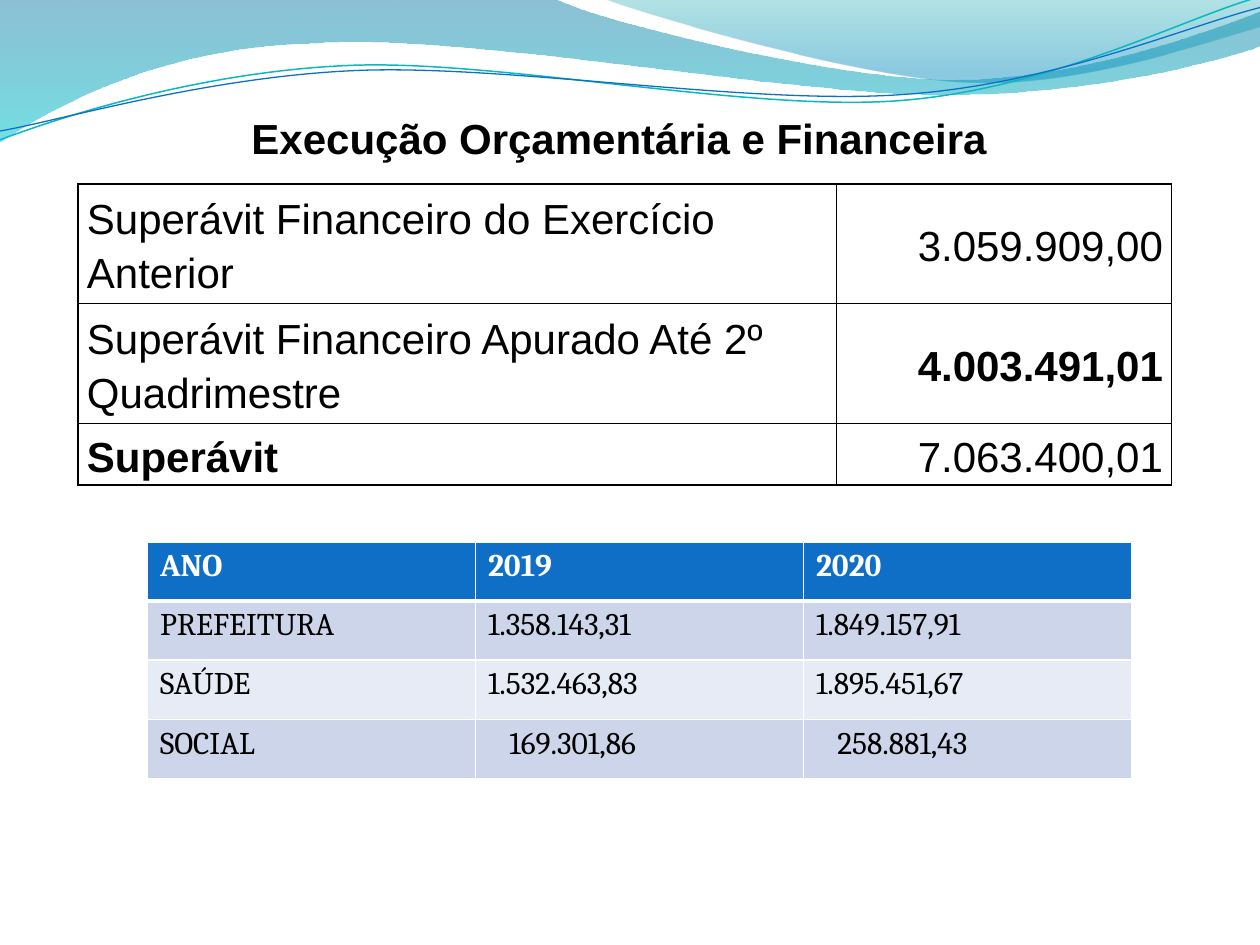
import lxml.etree
import pptx
import pptx.dml.color
import pptx.enum.text
import pptx.oxml.ns
import pptx.util

RGBColor = pptx.dml.color.RGBColor
Inches = pptx.util.Inches
Pt = pptx.util.Pt
ALIGN = pptx.enum.text.PP_ALIGN
ANCHOR = pptx.enum.text.MSO_ANCHOR
qn = pptx.oxml.ns.qn

BLACK = RGBColor(0x00, 0x00, 0x00)
WHITE = RGBColor(0xFF, 0xFF, 0xFF)
BLUE = RGBColor(0x0F, 0x6F, 0xC6)
TEAL = RGBColor(0x0A, 0xB8, 0xBF)
BAND_DARK = RGBColor(0xCC, 0xD5, 0xEA)
BAND_LIGHT = RGBColor(0xE7, 0xEB, 0xF5)

TITLE = "Execução Orçamentária e Financeira "
SURPLUS = [
    ("Superávit Financeiro do Exercício Anterior", False, "3.059.909,00", False),
    ("Superávit Financeiro Apurado Até 2º Quadrimestre", False, "4.003.491,01", True),
    ("Superávit", True, "7.063.400,01", False),
]
YEARS = [
    ("ANO", "2019", "2020"),
    ("PREFEITURA", "1.358.143,31", "1.849.157,91"),
    ("SAÚDE", "1.532.463,83", "1.895.451,67"),
    ("SOCIAL", "169.301,86", "258.881,43"),
]
INDENTED = {"169.301,86", "258.881,43"}

FILLED_WAVES = [
    ([(0, 0), (4.4, -0.01),
      (4.76, 0.17, 6.64, 0.63, 7.58, 0.63), (8.53, 0.63, 9.58, 0.26, 10, 0.09),
      (10.01, 0.36), (9.83, 0.44, 8.7, 0.76, 7.46, 0.75),
      (6.22, 0.75, 3.82, 0.28, 2.57, 0.34), (1.29, 0.36, 0.46, 0.83, -0.01, 1.13)],
     [(0, RGBColor(0x00, 0x74, 0xA1), 45), (1, RGBColor(0x00, 0xC6, 0xCF), 55)]),
    ([(4.79, -0.01),
      (5.09, 0.11, 6.82, 0.62, 7.69, 0.65), (8.56, 0.69, 9.61, 0.32, 10, 0.21),
      (10, 0)],
     [(0, RGBColor(0x00, 0xA1, 0xA9), 30), (0.8, RGBColor(0x00, 0x8B, 0xBF), 45)]),
]
LINE_WAVES = [
    ([(0, 1.11), (0.48, 0.93, 1.58, 0.57, 2.77, 0.52),
      (3.95, 0.47, 5.93, 0.89, 7.13, 0.8), (8.33, 0.71, 9.38, 0.15, 9.98, -0.02)],
     TEAL, 0.85),
    ([(0, 1.04), (0.47, 0.96, 1.64, 0.61, 2.83, 0.56),
      (4.03, 0.51, 5.97, 0.84, 7.17, 0.75), (8.36, 0.67, 9.41, 0.21, 10, 0.06)],
     BLUE, 0.75),
]


def add_wave(slide, segments, close):
    points = [
        (Inches(segment[index]), Inches(segment[index + 1]))
        for segment in segments for index in range(0, len(segment), 2)]
    builder = slide.shapes.build_freeform(*points[0])
    builder.add_line_segments(points[1:], close=close)
    shape = builder.convert_to_shape()
    shape.shadow.inherit = False
    lines = iter(list(shape._element.iter(qn("a:lnTo"))))
    for segment in segments[1:]:
        first = next(lines)
        if len(segment) == 6:
            curve = lxml.etree.Element(qn("a:cubicBezTo"))
            first.addprevious(curve)
            for line in (first, next(lines), next(lines)):
                curve.append(line[0])
                line.getparent().remove(line)
    return shape


def fill_gradient(shape, stops):
    shape.line.fill.background()
    shape.fill.gradient()
    shape.fill.gradient_angle = 270
    for stop, (position, color, opacity) in zip(shape.fill.gradient_stops, stops):
        stop.position = position
        stop.color.rgb = color
    colors = shape._element.spPr.iter(qn("a:srgbClr"))
    for element, (position, color, opacity) in zip(colors, stops):
        lxml.etree.SubElement(element, qn("a:alpha"), val=str(opacity * 1000))


def set_borders(cell, color, widths):
    properties = cell._tc.get_or_add_tcPr()
    for index, (side, width) in enumerate(zip("LRTB", widths)):
        line = lxml.etree.Element(qn("a:ln" + side), w=str(Pt(width)))
        if width:
            fill = lxml.etree.SubElement(line, qn("a:solidFill"))
            lxml.etree.SubElement(fill, qn("a:srgbClr"), val=str(color))
        else:
            lxml.etree.SubElement(line, qn("a:noFill"))
        properties.insert(index, line)


def write(cell, text, font_name, size, color, bold):
    cell.text_frame.text = text
    paragraph = cell.text_frame.paragraphs[0]
    for run in paragraph.runs:
        run.font.name = font_name
        run.font.size = Pt(size)
        run.font.color.rgb = color
        run.font.bold = bold
    return paragraph


def add_table(slide, left, top, widths, heights):
    frame = slide.shapes.add_table(
        len(heights), len(widths), Inches(left), Inches(top),
        Inches(sum(widths)), Inches(sum(heights)))
    table = frame.table
    table.first_row = table.horz_banding = False
    for column, width in zip(table.columns, widths):
        column.width = Inches(width)
    for row, height in zip(table.rows, heights):
        row.height = Inches(height)
    return table


def write_surplus(cell, text, bold, alignment, borders):
    paragraph = write(cell, text, "Arial", 24, BLACK, bold)
    paragraph.alignment = alignment
    paragraph.line_spacing = 1.15
    cell.vertical_anchor = ANCHOR.MIDDLE
    cell.margin_left = cell.margin_right = Inches(0.07)
    cell.margin_top = cell.margin_bottom = Inches(0.01)
    cell.fill.background()
    set_borders(cell, BLACK, borders)


def add_surplus_table(slide):
    table = add_table(slide, 0.62, 0.7, [6.02, 2.66], [0.76, 0.95, 0.95, 0.49])
    table.cell(0, 0).merge(table.cell(0, 1))
    write_surplus(table.cell(0, 0), TITLE, True, ALIGN.CENTER, (0, 0, 0, 1))
    set_borders(table.cell(0, 1), BLACK, (0, 0, 0, 1))
    for row, (label, label_bold, amount, amount_bold) in enumerate(SURPLUS, 1):
        write_surplus(table.cell(row, 0), label, label_bold, ALIGN.LEFT, (1, 1, 1, 1))
        write_surplus(table.cell(row, 1), amount, amount_bold, ALIGN.RIGHT, (1, 1, 1, 1))


def add_year_table(slide):
    table = add_table(slide, 1.17, 4.3, [7.81 / 3] * 3, [1.88 / 4] * len(YEARS))
    for row, texts in enumerate(YEARS):
        header = row == 0
        fill = BLUE if header else (BAND_LIGHT, BAND_DARK)[row % 2]
        for column, text in enumerate(texts):
            cell = table.cell(row, column)
            write(cell, text, "Cambria", 18, WHITE if header else BLACK, header)
            if text in INDENTED:
                cell.margin_left = Inches(0.27)
            cell.fill.solid()
            cell.fill.fore_color.rgb = fill
            set_borders(cell, WHITE, (1, 1, 3 if row == 1 else 1, 3 if header else 1))


def main():
    presentation = pptx.Presentation()
    presentation.slide_width = Inches(10)
    presentation.slide_height = Inches(7.5)
    slide = presentation.slides.add_slide(presentation.slide_layouts[6])
    for segments, stops in FILLED_WAVES:
        fill_gradient(add_wave(slide, segments, True), stops)
    for segments, color, width in LINE_WAVES:
        shape = add_wave(slide, segments, False)
        shape.fill.background()
        shape.line.color.rgb = color
        shape.line.width = Pt(width)
    add_surplus_table(slide)
    add_year_table(slide)
    presentation.save("out.pptx")


if __name__ == "__main__":
    main()
